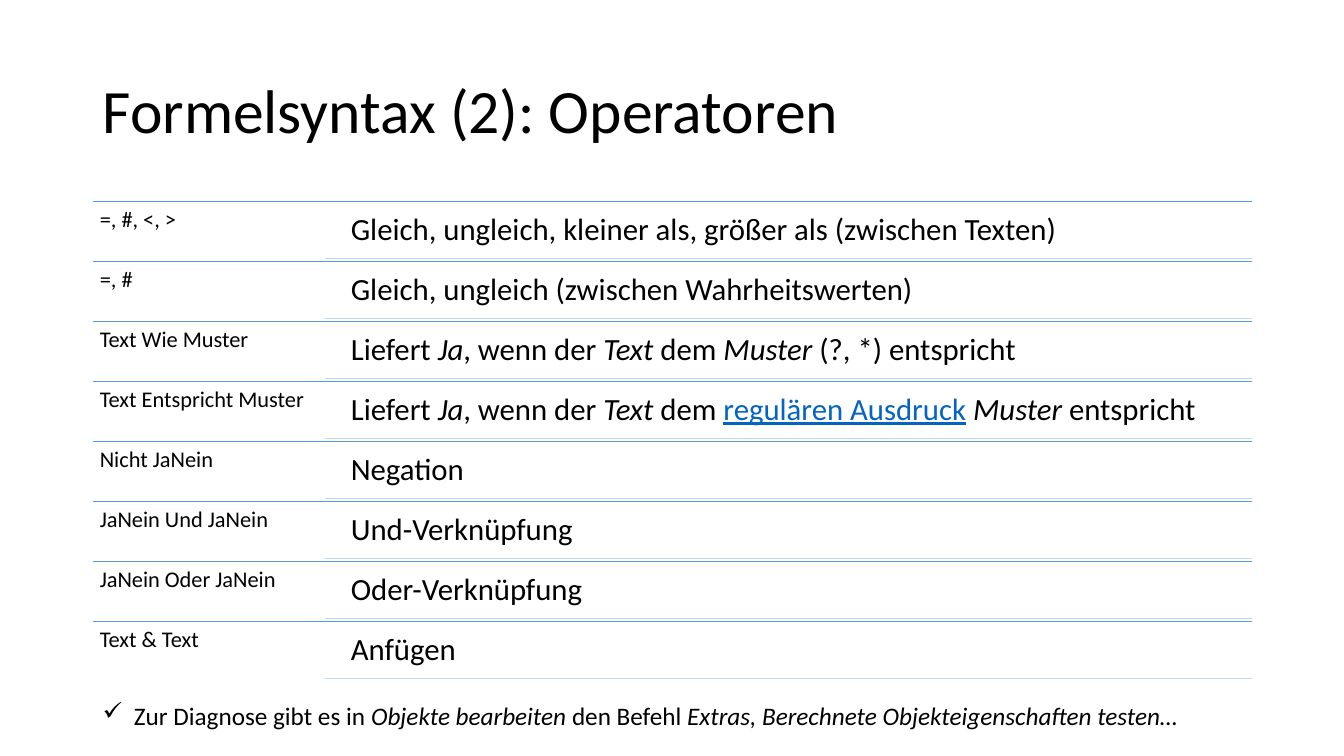
from dataclasses import dataclass

from lxml import etree
from pptx import Presentation
from pptx.dml.color import RGBColor
from pptx.enum.shapes import MSO_CONNECTOR
from pptx.enum.text import MSO_ANCHOR, MSO_AUTO_SIZE
from pptx.oxml.ns import qn
from pptx.util import Inches, Pt

STRAIGHT = MSO_CONNECTOR.STRAIGHT
TOP = MSO_ANCHOR.TOP
MIDDLE = MSO_ANCHOR.MIDDLE
GROW = MSO_AUTO_SIZE.SHAPE_TO_FIT_TEXT


@dataclass(frozen=True)
class Theme:
    font: str = "Calibri"
    ink: RGBColor = RGBColor(0x00, 0x00, 0x00)
    link: RGBColor = RGBColor(0x05, 0x63, 0xC1)
    row_rule: RGBColor = RGBColor(0x5B, 0x9B, 0xD5)
    meaning_rule: RGBColor = RGBColor(0xC4, 0xD5, 0xEB)
    title_size: int = 44
    operator_size: int = 16
    meaning_size: int = 22
    hint_size: int = 18
    rule_width: int = 1


@dataclass(frozen=True)
class Grid:
    left: float = 0.92
    top: float = 2
    width: float = 11.5
    height: float = 4.76
    rows: int = 8
    columns: int = 5
    indent: float = 0.17

    @property
    def right(self):
        return self.left + self.width

    @property
    def column(self):
        return self.width / self.columns

    @property
    def row(self):
        return self.height / self.rows


THEME = Theme()
GRID = Grid()
PLAIN, ITALIC, LINK = "plain", "italic", "link"

RESULT_IF_TEXT = [
    ("Liefert ", PLAIN), ("Ja", ITALIC), (", wenn der ", PLAIN),
    ("Text", ITALIC), (" dem ", PLAIN),
]
OPERATORS = [
    ("=, #, <, >", [("Gleich, ungleich, kleiner als, größer als (zwischen Texten)", PLAIN)]),
    ("=, #", [("Gleich, ungleich (zwischen Wahrheitswerten)", PLAIN)]),
    ("Text Wie Muster",
     RESULT_IF_TEXT + [("Muster", ITALIC), (" (?, *) entspricht", PLAIN)]),
    ("Text Entspricht Muster",
     RESULT_IF_TEXT + [("regulären Ausdruck", LINK), (" ", PLAIN),
                       ("Muster", ITALIC), (" entspricht", PLAIN)]),
    ("Nicht JaNein", [("Negation", PLAIN)]),
    ("JaNein Und JaNein", [("Und-Verknüpfung", PLAIN)]),
    ("JaNein Oder JaNein", [("Oder-Verknüpfung", PLAIN)]),
    ("Text & Text", [("Anfügen", PLAIN)]),
]
HINT = [
    ("Zur Diagnose gibt es in ", PLAIN), ("Objekte bearbeiten", ITALIC),
    (" den Befehl ", PLAIN),
    ("Extras, Berechnete Objekteigenschaften testen…", ITALIC),
]


def add_text(slide, place, pieces, size, inset=None, anchor=TOP, spacing=0.9):
    box = slide.shapes.add_textbox(*(Inches(length) for length in place))
    frame = box.text_frame
    frame.word_wrap = True
    frame.vertical_anchor = anchor
    if inset is not None:
        frame.margin_left = frame.margin_right = Inches(inset)
        frame.margin_top = frame.margin_bottom = Inches(inset)
    paragraph = frame.paragraphs[0]
    paragraph.line_spacing = spacing
    for words, style in pieces:
        run = paragraph.add_run()
        run.text = words
        run.font.name = THEME.font
        run.font.size = Pt(size)
        run.font.italic = style == ITALIC
        run.font.underline = style == LINK
        run.font.color.rgb = THEME.link if style == LINK else THEME.ink
    return frame


def add_rule(slide, left, y, color):
    rule = slide.shapes.add_connector(
        STRAIGHT, Inches(left), Inches(y), Inches(GRID.right), Inches(y))
    rule.line.color.rgb = color
    rule.line.width = Pt(THEME.rule_width)
    etree.SubElement(rule._element.spPr, qn("a:effectLst"))


def add_operator_row(slide, index, operator, meaning):
    top = GRID.top + index * GRID.row
    meaning_left = GRID.left + GRID.column
    text_left = meaning_left + GRID.indent
    text_top = top + 0.05 * GRID.row
    text_height = 0.9 * GRID.row
    add_rule(slide, GRID.left, top, THEME.row_rule)
    add_text(slide, (GRID.left, top, GRID.column, GRID.row),
             [(operator, PLAIN)], THEME.operator_size, inset=0.07)
    add_text(slide, (text_left, text_top, GRID.right - text_left, text_height),
             meaning, THEME.meaning_size, inset=0.09)
    add_rule(slide, meaning_left, text_top + text_height, THEME.meaning_rule)


def add_hint(slide):
    frame = add_text(slide, (GRID.left, 6.9, GRID.width, 0.4), HINT,
                     THEME.hint_size, spacing=1.0)
    frame.auto_size = GROW
    properties = frame.paragraphs[0]._p.get_or_add_pPr()
    properties.set("marL", str(Inches(0.31)))
    properties.set("indent", str(-Inches(0.31)))
    etree.SubElement(properties, qn("a:buChar"), char="✓")


def main():
    presentation = Presentation()
    presentation.slide_width = Inches(13.33)
    presentation.slide_height = Inches(7.5)
    slide = presentation.slides.add_slide(presentation.slide_layouts[6])
    add_text(slide, (GRID.left, 0.4, GRID.width, 1.45),
             [("Formelsyntax (2): Operatoren", PLAIN)], THEME.title_size, anchor=MIDDLE)
    for index, (operator, meaning) in enumerate(OPERATORS):
        add_operator_row(slide, index, operator, meaning)
    add_hint(slide)
    presentation.save("out.pptx")


if __name__ == "__main__":
    main()
